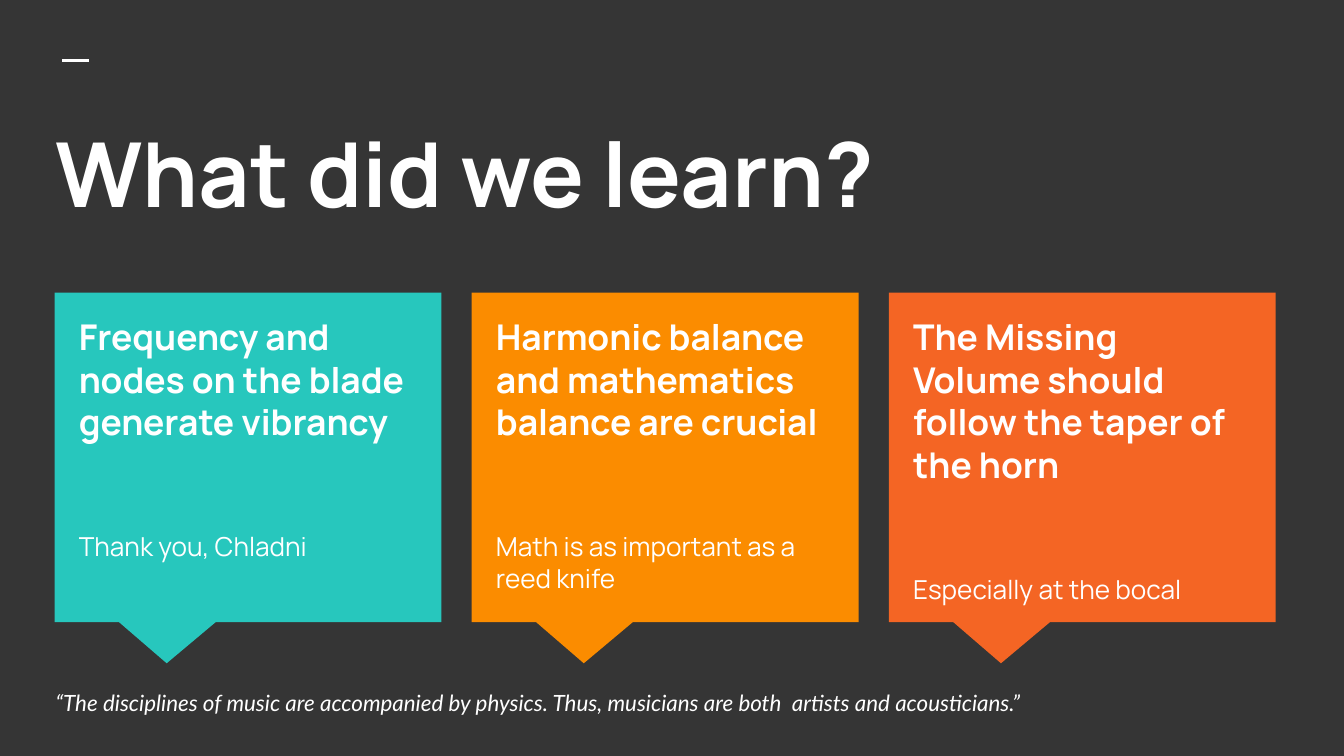
from lxml import etree
from pptx import Presentation
from pptx.dml.color import RGBColor as RGB
from pptx.enum.shapes import MSO_CONNECTOR as LINE, MSO_SHAPE as SHAPE
from pptx.enum.text import MSO_ANCHOR as ANCHOR
from pptx.oxml.ns import qn
from pptx.util import Cm, Pt

HUES = {"back": "353535", "white": "FFFFFF", "teal": "27C7BD",
        "amber": "FB8C00", "coral": "F46524"}
CARDS = [
    ("teal", "Frequency and nodes on the blade generate vibrancy",
     "Thank you, Chladni"),
    ("amber", "Harmonic balance and mathematics balance are crucial",
     "Math is as important as a reed knife"),
    ("coral", "The Missing Volume should follow the taper of the horn",
     "Especially at the bocal"),
]


def hue(name):
    return RGB.from_string(HUES[name])


def frame(slide, x, y, w, h, anchor=ANCHOR.TOP):
    """Add an empty wrapping text box, in cm, and return its text frame."""
    text = slide.shapes.add_textbox(Cm(x), Cm(y), Cm(w), Cm(h)).text_frame
    text.word_wrap = True
    text.vertical_anchor = anchor
    text.margin_left = text.margin_right = Cm(0.25)
    text.margin_top = text.margin_bottom = Cm(0.25)
    return text


def write(para, text, size, font="Manrope", bold=False, italic=False, before=0):
    para.space_before = Pt(before)
    run = para.add_run()
    run.text = text
    run.font.name, run.font.size = font, Pt(size)
    run.font.bold, run.font.italic = bold, italic
    run.font.color.rgb = hue("white")


def dash(slide, x, y, w):
    line = slide.shapes.add_connector(LINE.STRAIGHT, Cm(x), Cm(y), Cm(x + w), Cm(y))
    line.line.color.rgb = hue("white")
    line.line.width = Pt(1.5)
    etree.SubElement(line._element.spPr, qn("a:effectLst"))


def title(slide, x, y, w, h):
    text = frame(slide, x, y, w, h)
    write(text.paragraphs[0], "What did we learn?", 48, bold=True)


def card(slide, x, y, w, h, fill, head, note):
    box = slide.shapes.add_shape(SHAPE.RECTANGULAR_CALLOUT, Cm(x), Cm(y), Cm(w), Cm(h))
    box.adjustments[0], box.adjustments[1] = -0.21, 0.625
    box.shadow.inherit = False
    box.fill.solid()
    box.fill.fore_color.rgb = hue(fill)
    box.line.fill.background()
    text = frame(slide, x + 0.21, y + 0.18, w - 0.42, h - 0.68)
    write(text.paragraphs[0], head, 19, bold=True)
    write(text.add_paragraph(), note, 14, before=47)


def cards(slide, x, y, w, h, gap=0.57):
    wide = (w - gap * (len(CARDS) - 1)) / len(CARDS)
    for i, item in enumerate(CARDS):
        card(slide, x + i * (wide + gap), y, wide, h, *item)


def quote(slide, x, y, w, h):
    text = frame(slide, x, y, w, h, ANCHOR.MIDDLE)
    write(text.paragraphs[0],
          "“The disciplines of music are accompanied by physics. "
          "Thus, musicians are both  artists and acousticians.”",
          12, font="Lato", italic=True)


def main():
    deck = Presentation()
    deck.slide_width, deck.slide_height = Cm(25.4), Cm(14.29)
    slide = deck.slides.add_slide(deck.slide_layouts[6])
    slide.background.fill.solid()
    slide.background.fill.fore_color.rgb = hue("back")
    dash(slide, 1.18, 1.15, 0.5)
    title(slide, 0.8, 1.98, 23.95, 2.84)
    cards(slide, 1.03, 5.53, 23.08, 6.23)
    quote(slide, 0.8, 12.93, 18.82, 0.71)
    deck.save("out.pptx")


if __name__ == "__main__":
    main()
